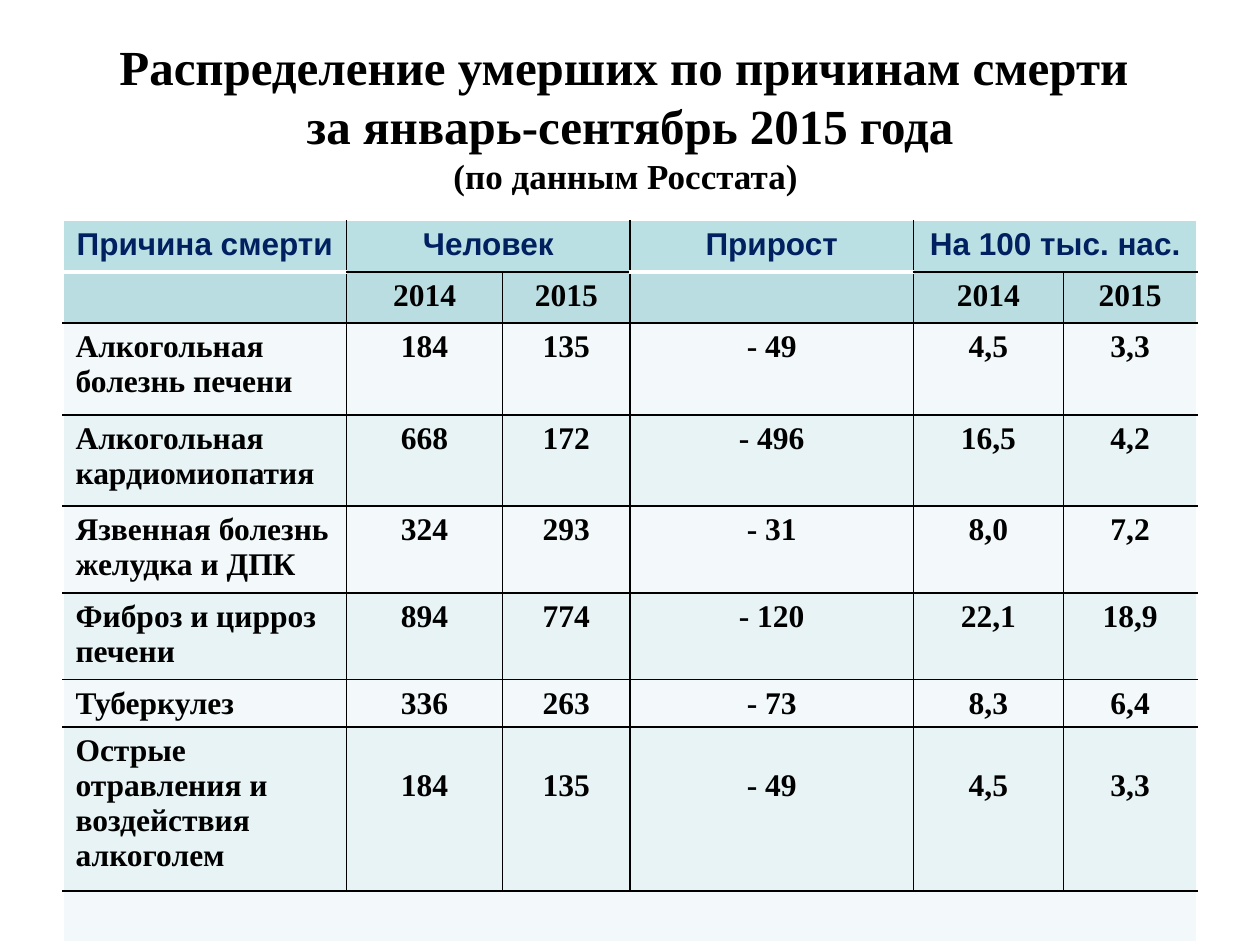
from copy import deepcopy

from lxml import etree
from pptx import Presentation
from pptx import util as u
from pptx.dml.color import RGBColor
from pptx.enum import text
from pptx.oxml.ns import qn

BLACK = RGBColor(0x00, 0x00, 0x00)
WHITE = RGBColor(0xFF, 0xFF, 0xFF)
NAVY = RGBColor(0x00, 0x20, 0x60)
HEADER_FILL = RGBColor(0xBB, 0xE0, 0xE3)
YEAR_FILL = RGBColor(0xBA, 0xDD, 0xE1)
BAND_FILLS = (RGBColor(0xF3, 0xF9, 0xFA), RGBColor(0xE7, 0xF3, 0xF4))

SERIF, SANS = "Times New Roman", "Arial"
MARGIN = 0.5
COLUMNS = (2.25, 1.24, 1.01, 2.25, 1.19, 1.06)
ROWS = (0.41, 0.35, 0.73, 0.72, 0.69, 0.69, 0.35, 1.3, 0.3)
ONE_LINE = 0.28

TITLE_LINES = (
    ("Распределение умерших по причинам смерти ", 28),
    ("за январь-сентябрь 2015 года", 28),
    ("(по данным Росстата) ", 20),
)
CONTENT = (
    ("Причина смерти", "Человек", "", "Прирост", "На 100 тыс. нас.", ""),
    ("", "2014", "2015", "", "2014", "2015"),
    ("Алкогольная болезнь печени", "184", "135", "- 49", "4,5", "3,3"),
    ("Алкогольная кардиомиопатия", "668", "172", "- 496", "16,5", "4,2"),
    ("Язвенная болезнь желудка и ДПК", "324", "293", "- 31", "8,0", "7,2"),
    ("Фиброз и цирроз печени", "894", "774", "- 120", "22,1", "18,9"),
    ("Туберкулез", "336", "263", "- 73", "8,3", "6,4"),
    ("Острые отравления и воздействия алкоголем",
     "184", "135", "- 49", "4,5", "3,3"),
    ("",) * 6,
)
LAST_ROW, LAST_COLUMN = len(ROWS) - 1, len(COLUMNS) - 1
POISONING_ROW = LAST_ROW - 1
UNDERLINED_WHITE = (0, 3)  # header columns without a year split


def add_span(para, words, size, font, color):
    span = para.add_run()
    span.text = words
    span.font.name = font
    span.font.size = u.Pt(size)
    span.font.bold = True
    span.font.color.rgb = color
    return span


def fill_title(box):
    box.left, box.top = u.Inches(MARGIN), u.Inches(0.3)
    box.width, box.height = u.Inches(sum(COLUMNS)), u.Inches(1.25)
    frame = box.text_frame
    frame.auto_size = text.MSO_AUTO_SIZE.NONE
    frame.vertical_anchor = text.MSO_ANCHOR.MIDDLE
    para = frame.paragraphs[0]
    para.alignment = text.PP_ALIGN.CENTER
    for number, (words, size) in enumerate(TITLE_LINES):
        span = add_span(para, words, size, SERIF, BLACK)
        if number < len(TITLE_LINES) - 1:
            para.add_line_break()
            # The break takes the size of its line
            line_break = para._p.findall(qn("a:br"))[-1]
            line_break.append(deepcopy(span._r.rPr))


def set_border(cell, side, color, width):
    properties = cell._tc.get_or_add_tcPr()
    line = etree.Element(qn("a:ln" + side), w=str(u.Pt(width)))
    solid = etree.SubElement(line, qn("a:solidFill"))
    etree.SubElement(solid, qn("a:srgbClr"), val=str(color))
    # Borders come before the fill, in the order L, R, T, B
    borders = [part for part in properties if part.tag.startswith(qn("a:ln"))]
    properties.insert(len(borders), line)


def draw_borders(cell, row, column):
    end = column + cell.span_width - 1
    open_header = column in UNDERLINED_WHITE
    if not cell.is_spanned:
        set_border(cell, "L", BLACK if column else WHITE, 1)
        set_border(cell, "R", BLACK if end < LAST_COLUMN else WHITE, 1)
    white_top = row == 0 or (row == 1 and open_header)
    set_border(cell, "T", WHITE if white_top else BLACK, 1)
    if row == 0 and open_header:
        set_border(cell, "B", WHITE, 3)
    else:
        set_border(cell, "B", BLACK if row < LAST_ROW else WHITE, 1)


def fill_cell(cell, row, column, words):
    cell.fill.solid()
    if row < 2:
        cell.fill.fore_color.rgb = (HEADER_FILL, YEAR_FILL)[row]
    else:
        cell.fill.fore_color.rgb = BAND_FILLS[row % 2]
    para = cell.text_frame.paragraphs[0]
    if row < 2 or column:
        para.alignment = text.PP_ALIGN.CENTER
    if row == POISONING_ROW and column:
        cell.margin_top = u.Inches(0.05 + ONE_LINE)
    if words:
        font, color = (SERIF, BLACK) if row else (SANS, NAVY)
        add_span(para, words, 18, font, color)


def add_causes_table(page):
    table = page.shapes.add_table(
        len(ROWS), len(COLUMNS), u.Inches(MARGIN), u.Inches(1.75),
        u.Inches(sum(COLUMNS)), u.Inches(sum(ROWS))).table
    for column, width in zip(table.columns, COLUMNS):
        column.width = u.Inches(width)
    for row, height in zip(table.rows, ROWS):
        row.height = u.Inches(height)

    # Joined cells: two split headings and the closing strip
    for row, first, last in ((0, 1, 2), (0, 4, 5), (LAST_ROW, 0, LAST_COLUMN)):
        table.cell(row, first).merge(table.cell(row, last))

    for row, line in enumerate(CONTENT):
        for column, words in enumerate(line):
            cell = table.cell(row, column)
            fill_cell(cell, row, column, words)
            draw_borders(cell, row, column)


def main():
    deck = Presentation()
    deck.slide_width, deck.slide_height = u.Inches(10), u.Inches(7.5)
    page = deck.slides.add_slide(deck.slide_layouts[5])
    fill_title(page.shapes.title)
    add_causes_table(page)
    deck.save("out.pptx")


if __name__ == "__main__":
    main()
